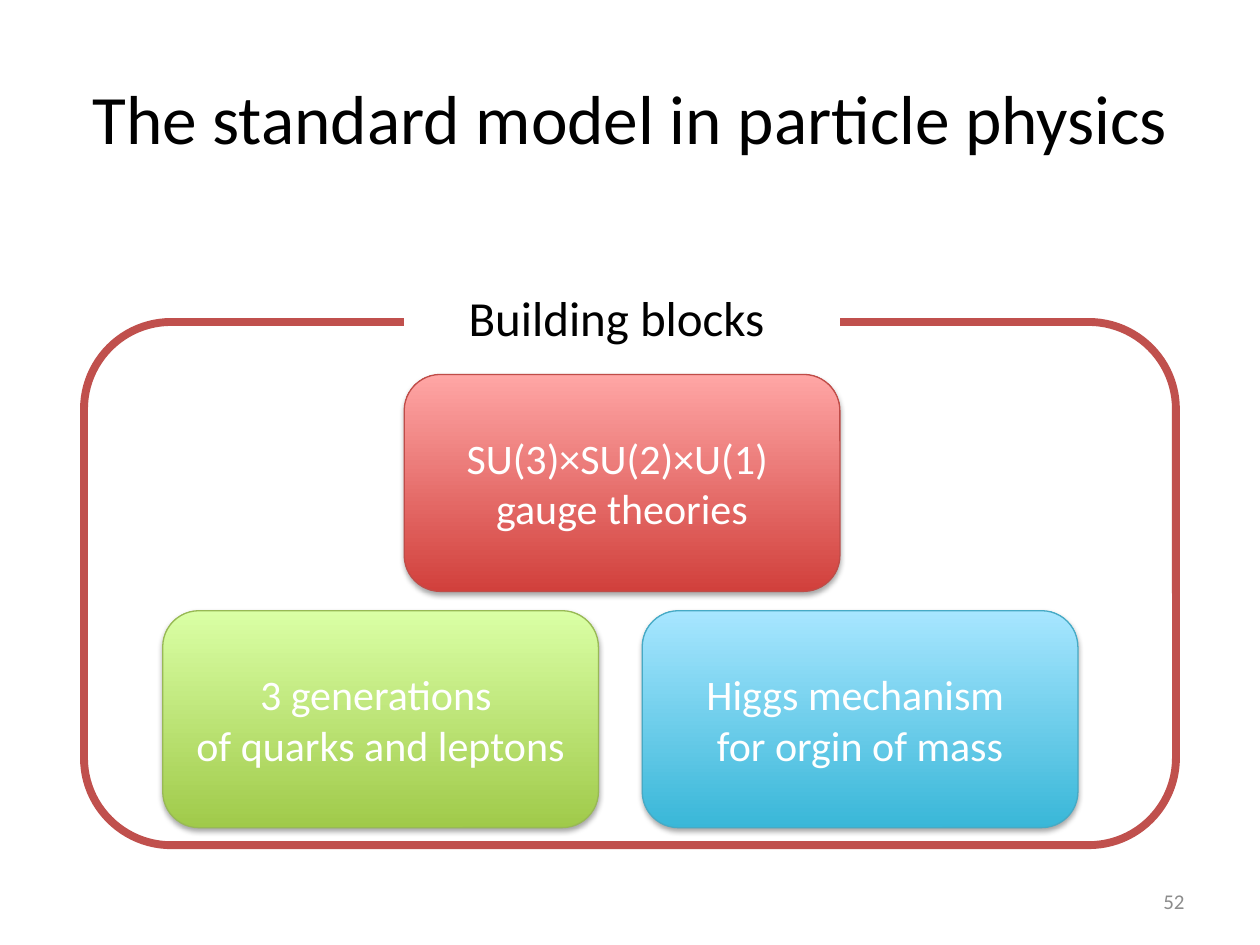
from dataclasses import dataclass

from lxml.etree import SubElement
from pptx import Presentation
from pptx.dml.color import RGBColor as RGB
from pptx.enum.shapes import MSO_SHAPE as SHAPE
from pptx.enum.text import MSO_ANCHOR as ANCHOR, PP_ALIGN as ALIGN
from pptx.oxml.ns import qn
from pptx.util import Pt


@dataclass(frozen=True)
class Theme:
    font: str = "Calibri"
    ink: str = "000000"
    paper: str = "FFFFFF"
    muted: str = "8C8C8C"
    frame: str = "C0504D"
    red: tuple = ("D1403C", "FFA6A5", "BF4C48")
    green: tuple = ("A0CA4A", "DAFFA5", "98B955")
    blue: tuple = ("39B7D8", "A7E6FF", "46AAC5")
    title: float = 39.6
    label: float = 28
    block: float = 24
    number: float = 12


THEME = Theme()


def color(value):
    return RGB.from_string(value)


def place(sp, box):
    sp.left, sp.top, sp.width, sp.height = (Pt(v) for v in box)


def write(sp, lines, size, ink, align=ALIGN.CENTER):
    tf = sp.text_frame
    tf.word_wrap = True
    tf.vertical_anchor = ANCHOR.MIDDLE
    tf.text = "\n".join(lines)
    for p in tf.paragraphs:
        p.alignment = align
        p.font.name = THEME.font
        p.font.size = Pt(size)
        p.font.color.rgb = color(ink)


def add_rounded(s, box, line=None, width=0.75):
    sp = s.shapes.add_shape(SHAPE.ROUNDED_RECTANGLE, *(Pt(v) for v in box))
    sp.fill.solid()
    sp.fill.fore_color.rgb = color(THEME.paper)
    if line:
        sp.line.color.rgb = color(line)
        sp.line.width = Pt(width)
    else:
        sp.line.fill.background()
    sp.shadow.inherit = False
    return sp


def add_drop_shadow(sp):
    effects = sp._element.spPr.find(qn("a:effectLst"))
    shadow = SubElement(effects, qn("a:outerShdw"), blurRad=str(Pt(3.1)),
                        dist=str(Pt(1.8)), dir="5400000", rotWithShape="0")
    tone = SubElement(shadow, qn("a:srgbClr"), val=THEME.ink)
    SubElement(tone, qn("a:alpha"), val="35000")


def add_block(s, box, lines, palette):
    dark, light, line = palette
    sp = add_rounded(s, box, line)
    sp.fill.gradient()
    sp.fill.gradient_angle = 90
    for stop, tone in zip(sp.fill.gradient_stops, (dark, light)):
        stop.color.rgb = color(tone)
    add_drop_shadow(sp)
    write(sp, lines, THEME.block, THEME.paper)


def add_title(s, box, text):
    place(s.shapes.title, box)
    write(s.shapes.title, [text], THEME.title, THEME.ink)


def add_building_blocks(s, box):
    left, top, width, height = box
    block_w, block_h = 249, 124
    upper, lower = top + 30, top + 165
    center_x, left_x = left + 183, left + 45
    right_x = left_x + block_w + 25

    add_rounded(s, box, THEME.frame, 4.5)
    blocks = [
        (center_x, upper, ["SU(3)×SU(2)×U(1) ", "gauge theories"], THEME.red),
        (left_x, lower, ["3 generations ", "of quarks and leptons"], THEME.green),
        (right_x, lower, ["Higgs mechanism ", "for orgin of mass"], THEME.blue),
    ]
    for x, y, lines, palette in blocks:
        add_block(s, (x, y, block_w, block_h), lines, palette)
    label = add_rounded(s, (center_x, top - 30, block_w, 54))
    write(label, ["Building blocks "], THEME.label, THEME.ink)


def add_page_number(s, box, text):
    sp = s.shapes.add_textbox(*(Pt(v) for v in box))
    write(sp, [text], THEME.number, THEME.muted, ALIGN.RIGHT)


def main():
    prs = Presentation()
    prs.slide_width, prs.slide_height = Pt(720), Pt(540)
    s = prs.slides.add_slide(prs.slide_layouts[5])
    add_title(s, (36, 21.6, 648, 90), "The standard model in particle physics")
    add_building_blocks(s, (48, 184, 624, 299))
    add_page_number(s, (516, 500.5, 168, 28.75), "52")
    prs.save("out.pptx")


if __name__ == "__main__":
    main()
